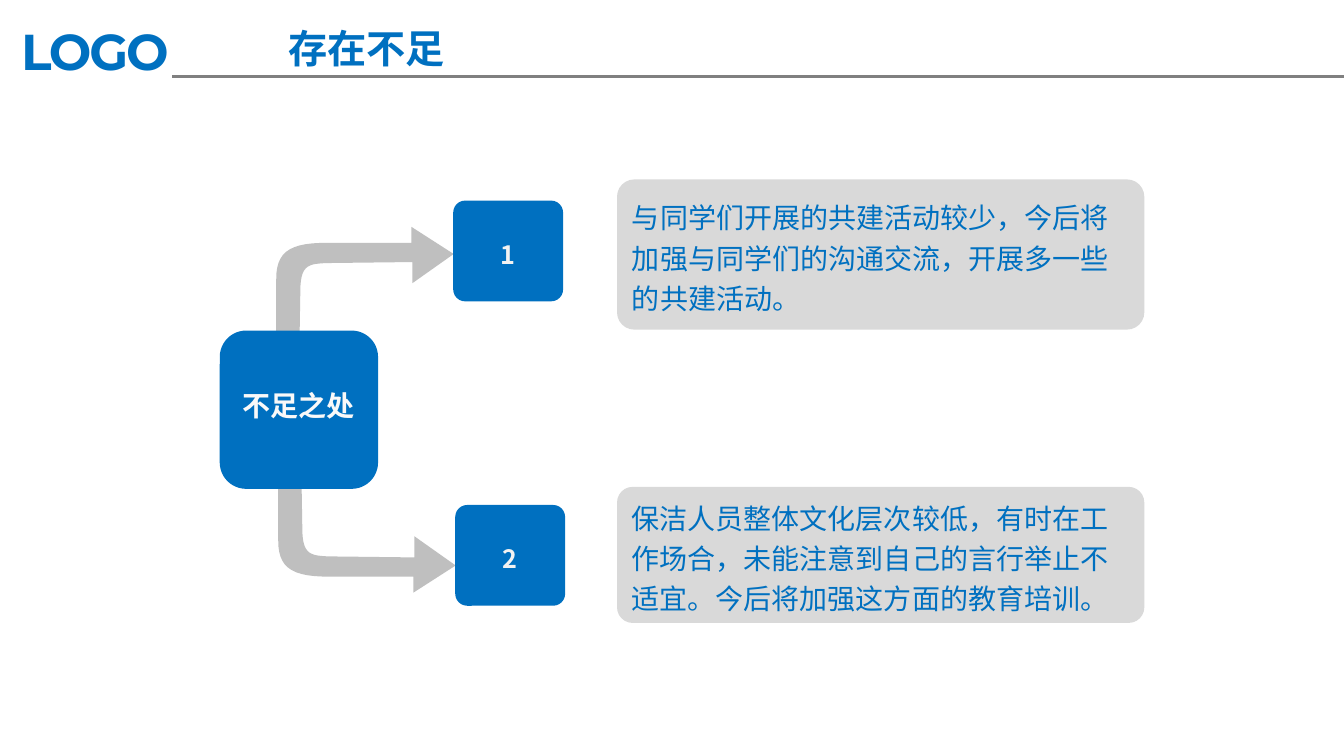
from lxml import etree
from pptx import Presentation
from pptx.dml.color import RGBColor
from pptx.enum.shapes import MSO_CONNECTOR, MSO_SHAPE
from pptx.enum.text import MSO_ANCHOR, PP_ALIGN
from pptx.oxml.ns import qn
from pptx.util import Inches, Pt

ROUND = MSO_SHAPE.ROUNDED_RECTANGLE
LINE = MSO_CONNECTOR.STRAIGHT
TOP, MIDDLE = MSO_ANCHOR.TOP, MSO_ANCHOR.MIDDLE
LEFT, CENTER = PP_ALIGN.LEFT, PP_ALIGN.CENTER

COLORS = {"blue": "0070C0", "rule": "808080", "arrow": "BFBFBF",
          "card": "D9D9D9", "digit": "F2F2F2", "label": "F9F9F9"}
HAN, LATIN = "Noto Sans CJK SC", "Montserrat"

# The slide is a grid of square cells, ten to the inch.
COLS, ROWS = 133.3, 75
HUB = (21.8, 32.8, 15.7, 15.7)
OVERLAP = 10.2
CARD_W, NUM_X, NUM_W, NUM_H = 52.3, 17.55, 10.9, 10

# Arrow outline: one point is a straight edge, three points are a curve.
START = (2.2, 2.4)
OUTLINE = [
    [(2.4, 14.6)],
    [(2.5, 16.8), (3.4, 16.8), (4.9, 16.9)],
    [(13.5, 17)], [(13.5, 14.9)], [(17.6, 17.8)], [(13.4, 20.5)],
    [(13.4, 18.9)], [(4.4, 18.9)],
    [(1.1, 18.8), (0, 17.8), (0, 15.3)],
    [(0, 2.1)],
    [(0.3, 0), (1.7, 0.2), START],
]

# Box, direction of the arrow, offset of the number, text
BRANCHES = [
    ((27.4, 17.8, 86.1, 14.9), -1, 2.1,
     "与同学们开展的共建活动较少，今后将加强与同学们的沟通交流，开展多一些的共建活动。"),
    ((27.6, 48.3, 85.9, 13.5), 1, 1.8,
     "保洁人员整体文化层次较低，有时在工作场合，未能注意到自己的言行举止不适宜。今后将加强这方面的教育培训。"),
]


def cell(n):
    return Inches(n / 10)


def color(name):
    return RGBColor.from_string(COLORS[name])


def write(shape, text, size, tint, font=HAN, bold=False, align=LEFT,
          anchor=MIDDLE, space=1.2, pads=(1, 0.5, 1, 0.5), track=0):
    frame = shape.text_frame
    frame.word_wrap = True
    frame.vertical_anchor = anchor
    (frame.margin_left, frame.margin_top,
     frame.margin_right, frame.margin_bottom) = map(cell, pads)
    para = frame.paragraphs[0]
    para.alignment, para.line_spacing = align, space
    run = para.add_run()
    run.text = text
    run.font.size, run.font.bold = Pt(size), bold
    run.font.color.rgb = color(tint)
    run.font.name = font
    props = run.font._element
    etree.SubElement(props, qn("a:ea")).set("typeface", font)
    if track:
        props.set("spc", str(track))


def paint(shape, tint):
    shape.shadow.inherit = False
    shape.fill.solid()
    shape.fill.fore_color.rgb = color(tint)
    shape.line.fill.background()


def block(slide, box, tint, curve):
    shape = slide.shapes.add_shape(ROUND, *map(cell, box))
    shape.adjustments[0] = curve
    paint(shape, tint)
    return shape


def bend(ends, steps=12):
    """Return points along the cubic curve through four control points."""
    points = []
    for i in range(1, steps + 1):
        t = i / steps
        parts = ((1 - t) ** 3, 3 * t * (1 - t) ** 2,
                 3 * t * t * (1 - t), t ** 3)
        points.append(tuple(sum(k * p[axis] for k, p in zip(parts, ends))
                            for axis in (0, 1)))
    return points


def arrow(slide, left, edge, turn):
    """Draw a bent arrow from edge; turn is 1 for down and -1 for up."""
    points = [START]
    for part in OUTLINE:
        points += bend([points[-1], *part]) if len(part) == 3 else part
    spots = [(cell(left + x), cell(edge + turn * y)) for x, y in points]
    form = slide.shapes.build_freeform(*spots[0])
    form.add_line_segments(spots[1:], close=True)
    paint(form.convert_to_shape(), "arrow")


def header(slide, box):
    left, top, width, height = box
    logo = slide.shapes.add_textbox(
        *map(cell, (left + 0.8, top + 1.3, 18.6, 7.4)))
    write(logo, "LOGO", 36, "blue", font=LATIN, bold=True, anchor=TOP,
          space=1, pads=(1.3, 0.7, 1.3, 0.7), track=-150)
    base = top + height
    rule = slide.shapes.add_connector(
        LINE, *map(cell, (left + 17.1, base, left + width, base)))
    rule.line.color.rgb = color("rule")
    rule.line.width = Pt(2)
    etree.SubElement(rule._element.spPr, qn("a:effectLst"))
    title = slide.shapes.add_textbox(
        *map(cell, (left + 18.4, top + 1.9, 35.9, 5.7)))
    write(title, "存在不足", 28, "blue", bold=True, align=CENTER,
          anchor=TOP, space=1)


def branch(slide, box, turn, drop, digit, text):
    left, top, width, height = box
    side = HUB[1] + (HUB[3] if turn > 0 else 0)
    arrow(slide, left, side - turn * OVERLAP, turn)
    card = block(slide, (left + width - CARD_W, top, CARD_W, height),
                 "card", 0.115)
    write(card, text, 20, "blue")
    number = block(slide, (left + NUM_X, top + drop, NUM_W, NUM_H),
                   "blue", 0.119)
    write(number, digit, 18, "digit", bold=True, align=CENTER)


def hub(slide, box):
    shape = block(slide, box, "blue", 0.1667)
    write(shape, "不足之处", 20, "label", bold=True, align=CENTER,
          pads=(1.4, 0.5, 1.4, 2))


def main():
    deck = Presentation()
    deck.slide_width, deck.slide_height = cell(COLS), cell(ROWS)
    slide = deck.slides.add_slide(deck.slide_layouts[6])
    header(slide, (0, 0, COLS, 7.6))
    for i, (box, turn, drop, text) in enumerate(BRANCHES, 1):
        branch(slide, box, turn, drop, str(i), text)
    hub(slide, HUB)
    deck.save("out.pptx")


if __name__ == "__main__":
    main()
